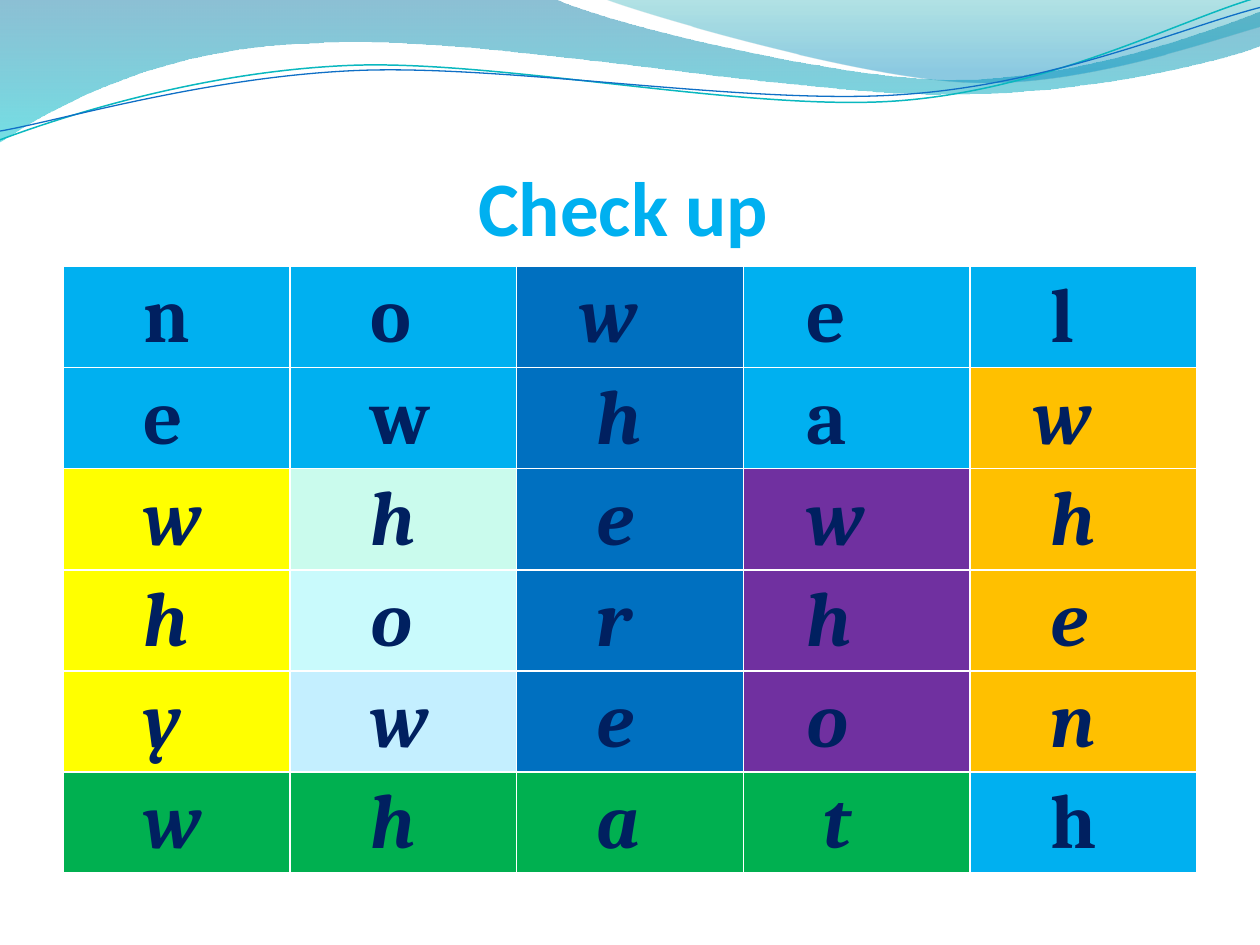
"""Build the "Check up" slide: a question-word letter grid under a wave banner."""
from dataclasses import dataclass
from math import cos, radians, sin

from lxml.etree import SubElement
from pptx import Presentation
from pptx.dml.color import RGBColor
from pptx.enum.text import MSO_ANCHOR
from pptx.oxml.ns import qn
from pptx.util import Pt


@dataclass(frozen=True)
class Theme:
    title_font: str = "Calibri"
    letter_font: str = "Cambria"
    type_size: int = 44
    title: str = "00B0F0"
    letter: str = "002060"
    border: str = "FFFFFF"
    teal_line: str = "0AB8BF"
    blue_line: str = "0F6FC6"
    back_wave: tuple = ((0, "0074A1", 45), (1, "00C6CF", 55))
    front_wave: tuple = ((0, "00A1A9", 30), (0.8, "008BBF", 45))


THEME = Theme()
LETTERS = ["nowel", "ewhaw", "whewh", "horhe", "yweon", "whath"]
FILL_CODES = ["ssbss", "ssbso", "ymbpo", "yabpo", "yibpo", "ggggs"]
FILLS = {
    "s": "00B0F0", "b": "0070C0", "o": "FFC000", "y": "FFFF00", "p": "7030A0",
    "g": "00B050", "m": "CAFBED", "a": "C9FAFC", "i": "C4EFFF",
}
NARROW_INDENTS = {(0, 2), (1, 4)} | {(row, 3) for row in range(5)}
CURVE_TILT = -2.7

BACK_WAVE = [
    (0, 0), (316.8, -0.7),
    (342.7, 12.2, 478.1, 45.4, 545.8, 45.4),
    (614.2, 45.4, 689.8, 18.7, 720, 6.5),
    (720.7, 25.9),
    (707.8, 31.7, 626.4, 54.7, 537.1, 54),
    (447.8, 54, 275, 20.2, 185, 24.5),
    (92.9, 25.9, 33.1, 59.8, -0.7, 81.4),
]
FRONT_WAVE = [
    (344.9, -0.7),
    (366.5, 7.9, 491, 44.6, 553.7, 46.8),
    (616.3, 49.7, 691.9, 23, 720, 15.1),
    (720, 0),
]
TEAL_CURVE = [
    (0, 79.9),
    (34.6, 67, 113.8, 41, 199.4, 37.4),
    (284.4, 33.8, 427, 64.1, 513.4, 57.6),
    (599.8, 51.1, 675.4, 10.8, 718.6, -1.4),
]
BLUE_CURVE = [
    (0, 74.9),
    (33.8, 69.1, 118.1, 43.9, 203.8, 40.3),
    (290.2, 36.7, 429.8, 60.5, 516.2, 54),
    (601.9, 48.2, 677.5, 15.1, 720, 4.3),
]


def turn(point, center, degrees):
    """Turn a point clockwise about a center."""
    x, y = point[0] - center[0], point[1] - center[1]
    cosine, sine = cos(radians(degrees)), sin(radians(degrees))
    return center[0] + x * cosine - y * sine, center[1] + x * sine + y * cosine


def add_outline(slide, segments, close, center=(0, 0), tilt=0):
    """Add a shadowless freeform of straight and cubic segments."""
    points = [
        turn(segment[index:index + 2], center, -tilt)
        for segment in segments for index in range(0, len(segment), 2)
    ]
    vertices = [(Pt(x), Pt(y)) for x, y in points]
    builder = slide.shapes.build_freeform(*vertices[0], scale=1.0)
    builder.add_line_segments(vertices[1:], close=close)
    shape = builder.convert_to_shape()
    shape.rotation = tilt
    shape.shadow.inherit = False
    lines = iter(list(shape._element.spPr.iter(qn("a:lnTo"))))
    for segment in segments[1:]:
        line = next(lines)
        if len(segment) == 6:
            line.tag = qn("a:cubicBezTo")
            for extra in (next(lines), next(lines)):
                line.append(extra[0])
                extra.getparent().remove(extra)
    return shape


def add_wave(slide, segments, stops):
    """Add a wave with a translucent top-to-bottom gradient."""
    shape = add_outline(slide, segments, True)
    shape.line.fill.background()
    shape.fill.gradient()
    shape.fill.gradient_angle = 270
    for gradient_stop, (position, color, _) in zip(shape.fill.gradient_stops, stops):
        gradient_stop.position = position
        gradient_stop.color.rgb = RGBColor.from_string(color)
    colors = shape._element.spPr.iter(qn("a:srgbClr"))
    for element, (_, _, opacity) in zip(list(colors), stops):
        SubElement(element, qn("a:alpha"), val=str(opacity * 1000))


def add_curve(slide, segments, center, color, width):
    """Add an unfilled curved line, tilted about its center."""
    shape = add_outline(slide, segments, False, center, CURVE_TILT)
    shape.fill.background()
    shape.line.color.rgb = RGBColor.from_string(color)
    shape.line.width = Pt(width)


def format_text(text_frame, font_name, color, italic=False):
    """Format every run of the first paragraph."""
    for run in text_frame.paragraphs[0].runs:
        run.font.name = font_name
        run.font.size = Pt(THEME.type_size)
        run.font.bold = True
        run.font.italic = italic
        run.font.color.rgb = RGBColor.from_string(color)


def add_title(slide, text):
    """Add the heading, indented from the left and resting on the box bottom."""
    text_frame = slide.shapes.add_textbox(Pt(36), Pt(55.4), Pt(648), Pt(90)).text_frame
    text_frame.word_wrap = True
    text_frame.vertical_anchor = MSO_ANCHOR.BOTTOM
    text_frame.margin_left = Pt(237.3)
    text_frame.margin_right = Pt(0)
    text_frame.margin_bottom = Pt(1.7)
    text_frame.text = text
    format_text(text_frame, THEME.title_font, THEME.title)


def add_borders(cell):
    """Draw a thin border on all four sides of a cell."""
    properties = cell._tc.get_or_add_tcPr()
    for side in ("lnL", "lnR", "lnT", "lnB"):
        line = SubElement(properties, qn(f"a:{side}"), w=str(Pt(1)))
        fill = SubElement(line, qn("a:solidFill"))
        SubElement(fill, qn("a:srgbClr"), val=THEME.border)


def add_letter_grid(slide):
    """Add the letter table; letters of hidden words are italic."""
    rows, columns = len(LETTERS), len(LETTERS[0])
    row_height = 57.8
    table = slide.shapes.add_table(
        rows, columns, Pt(36), Pt(152.2), Pt(648), Pt(rows * row_height)
    ).table
    table.first_row = table.horz_banding = False
    for row in range(rows):
        table.rows[row].height = Pt(row_height)
        for column in range(columns):
            cell = table.cell(row, column)
            code = FILL_CODES[row][column]
            add_borders(cell)
            cell.fill.solid()
            cell.fill.fore_color.rgb = RGBColor.from_string(FILLS[code])
            cell.margin_left = Pt(36.2 if (row, column) in NARROW_INDENTS else 45.9)
            cell.margin_top, cell.margin_bottom = Pt(4.2), Pt(0.8)
            cell.text_frame.text = LETTERS[row][column]
            format_text(cell.text_frame, THEME.letter_font, THEME.letter, code != "s")


def main():
    """Build and save the presentation."""
    presentation = Presentation()
    presentation.slide_width, presentation.slide_height = Pt(720), Pt(540)
    slide = presentation.slides.add_slide(presentation.slide_layouts[6])
    add_wave(slide, BACK_WAVE, THEME.back_wave)
    add_wave(slide, FRONT_WAVE, THEME.front_wave)
    add_curve(slide, TEAL_CURVE, (359.3, 41.4), THEME.teal_line, 0.85)
    add_curve(slide, BLUE_CURVE, (359.6, 42.5), THEME.blue_line, 0.75)
    add_title(slide, "Check up")
    add_letter_grid(slide)
    presentation.save("out.pptx")


if __name__ == "__main__":
    main()
